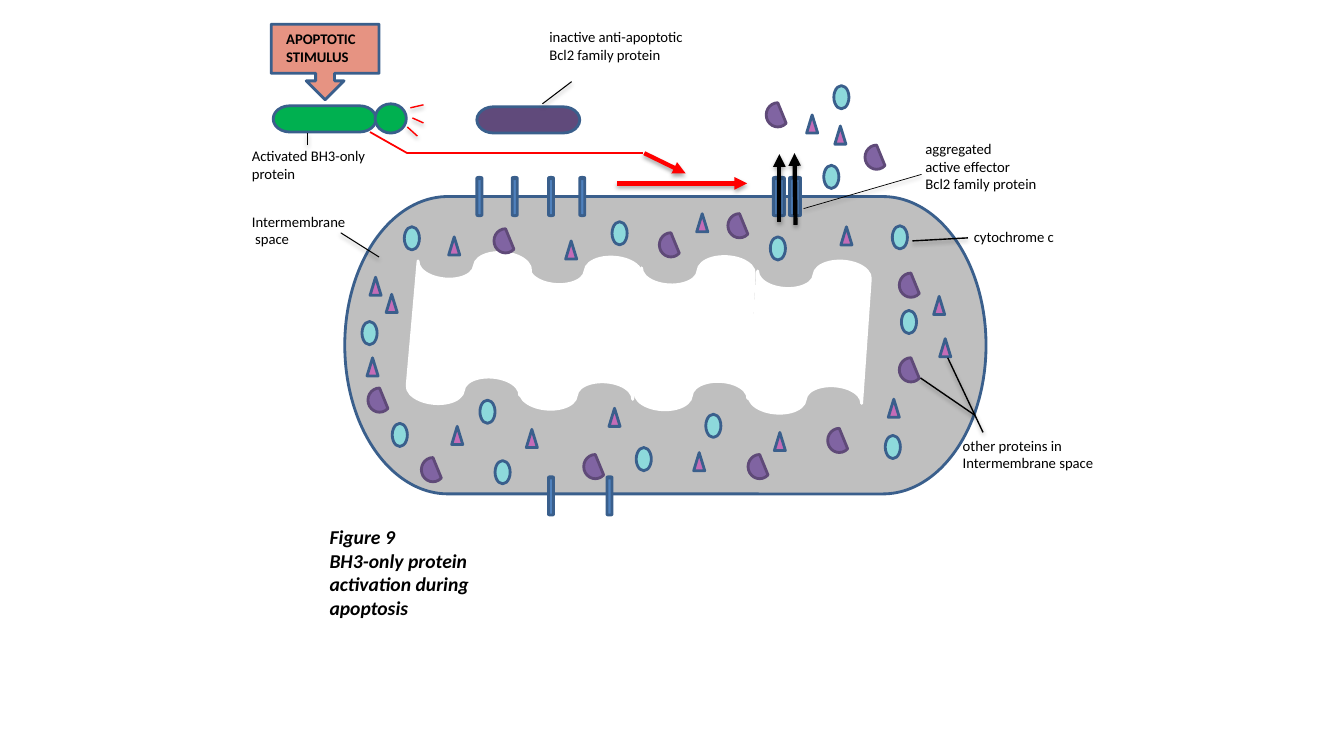
from lxml import etree
from pptx import Presentation, util as u
from pptx.dml.color import RGBColor
from pptx.enum import shapes, text
from pptx.oxml.ns import qn

# The slide is a grid of 1333 columns by 750 rows, each 0.01 inch.
CELL = u.Inches(0.01)
COLS, ROWS = 1333, 750
FORM = shapes.MSO_SHAPE
HEX = {
    "black": "000000", "white": "FFFFFF", "red": "FF0000", "green": "00B050",
    "salmon": "E69382", "grey": "BFBFBF", "edge": "3A5F8C", "blue": "4F81BD",
    "pink": "C46CB7", "aqua": "8DD9DB", "purple": "8064A2", "plum": "5F4A78",
    "dark": "604A7B",
}
# kind: preset, width, height, fill, line
PARTS = {
    "pore": (FORM.CAN, 5, 38, "blue", "edge"),
    "triangle": (FORM.ISOSCELES_TRIANGLE, 11, 18, "pink", "edge"),
    "oval": (FORM.FLOWCHART_CONNECTOR, 15, 23, "aqua", "edge"),
    "chord": (FORM.CHORD, 23, 24, "purple", "plum"),
}


def color(name):
    return RGBColor.from_string(HEX[name])


def place(box, x, y):
    return round((box[0] + x) * CELL), round((box[1] + y) * CELL)


def draw(slide, box, form, area, fill, line="edge", turn=0):
    x, y, w, h = area
    item = slide.shapes.add_shape(form, *place(box, x, y), w * CELL, h * CELL)
    item.rotation = turn
    item.shadow.inherit = False
    item.fill.solid()
    item.fill.fore_color.rgb = color(fill)
    item.line.color.rgb = color(line)
    item.line.width = u.Pt(2)


def scatter(slide, box, kind, spots):
    """Put one part of the given kind at every spot."""
    form, w, h, fill, line = PARTS[kind]
    for x, y in spots:
        draw(slide, box, form, (x, y, w, h), fill, line)


def stroke(slide, box, start, end, width, hue="black", arrow=False, shade=True):
    item = slide.shapes.add_connector(
        shapes.MSO_CONNECTOR.STRAIGHT, *place(box, *start), *place(box, *end))
    item.line.color.rgb = color(hue)
    item.line.width = u.Pt(width)
    if arrow:
        etree.SubElement(item.line._get_or_add_ln(), qn("a:tailEnd"), type="triangle")
    effect = etree.SubElement(item._element.spPr, qn("a:effectLst"))
    if shade:
        blur = etree.SubElement(
            effect, qn("a:outerShdw"), blurRad=str(u.Pt(3.1)),
            dist=str(u.Pt(1.8)), dir="5400000", rotWithShape="0")
        tint = etree.SubElement(blur, qn("a:srgbClr"), val=HEX["black"])
        etree.SubElement(tint, qn("a:alpha"), val="35000")


def write(slide, box, area, words, size=10.5, bold=False, italic=False):
    x, y, w, h = area
    frame = slide.shapes.add_textbox(*place(box, x, y), w * CELL, h * CELL).text_frame
    frame.word_wrap = True
    frame.auto_size = text.MSO_AUTO_SIZE.SHAPE_TO_FIT_TEXT
    frame.text = words
    for para in frame.paragraphs:
        font = para.font
        font.name, font.size = "Calibri", u.Pt(size)
        font.bold, font.italic = bold, italic
        font.color.rgb = color("black")


def organelle(slide, box):
    """Mitochondrion with its membranes, pores, proteins and labels."""
    draw(slide, box, FORM.FLOWCHART_TERMINATOR, (2, 25, 636, 295), "grey")
    for x, y, turn in ((69, 78, 5), (180, 83, 184), (293, 83, 183), (407, 87, 4)):
        draw(slide, box, FORM.FLOWCHART_PUNCHED_TAPE, (x, y, 112, 155),
             "white", "white", turn)
    scatter(slide, box, "pore", [(x, 303) for x in (262, 204)]
            + [(x, 6) for x in (235, 204, 168, 133)])
    scatter(slide, box, "triangle", [
        (27, 105), (43, 122), (24, 185), (108, 253), (264, 235),
        (348, 279), (428, 259), (182, 256), (494, 55), (221, 69),
        (105, 65), (351, 42), (541, 226), (592, 166), (586, 124)])
    scatter(slide, box, "oval", [
        (424, 65), (267, 50), (61, 55), (19, 149), (49, 250), (136, 227),
        (151, 287), (291, 274), (360, 241), (538, 262), (554, 138), (545, 54)])
    scatter(slide, box, "chord", [
        (402, 281), (382, 42), (314, 61), (150, 57), (25, 215),
        (78, 284), (239, 281), (481, 255), (552, 185), (552, 101)])
    write(slide, box, (-100, 36, 142, 45), "Intermembrane\n space")
    write(slide, box, (616, 51, 124, 28), "cytochrome c")
    write(slide, box, (605, 258, 159, 45), "other proteins in\nIntermembrane space")
    stroke(slide, box, (-2, 61), (36, 85), 0.75)
    for start, end in (((565, 69), (620, 66)), ((573, 205), (627, 242)),
                       ((600, 185), (635, 259))):
        stroke(slide, box, start, end, 1)


def release(slide, box):
    """Open pore with the proteins that leave through it."""
    scatter(slide, box, "pore", [(x, 96) for x in (29, 23, 13, 7)])
    scatter(slide, box, "chord", [(98, 64), (0, 22)])
    scatter(slide, box, "triangle", [(40, 34), (68, 45)])
    scatter(slide, box, "oval", [(67, 5), (57, 84)])
    write(slide, box, (148, 54, 141, 63),
          "aggregated\nactive effector\nBcl2 family protein")
    stroke(slide, box, (37, 127), (154, 93), 0.5)
    stroke(slide, box, (29, 143), (28, 72), 3, arrow=True)
    stroke(slide, box, (13, 140), (13, 73), 3, arrow=True)


def signal(slide, box):
    """Stimulus, activated and inactive proteins, and the red pathway."""
    draw(slide, box, FORM.DOWN_ARROW_CALLOUT, (29, 4, 107, 75), "salmon")
    write(slide, box, (34, 5, 115, 45), "APOPTOTIC\nSTIMULUS", bold=True)
    draw(slide, box, FORM.FLOWCHART_TERMINATOR, (233, 86, 102, 26), "dark")
    write(slide, box, (295, 3, 159, 45), "inactive anti-apoptotic\nBcl2 family protein")
    stroke(slide, box, (298, 83), (327, 61), 0.75)
    draw(slide, box, FORM.FLOWCHART_TERMINATOR, (31, 85, 102, 26), "green")
    draw(slide, box, FORM.FLOWCHART_CONNECTOR, (132, 83, 31, 29), "green")
    write(slide, box, (0, 121, 152, 45), "Activated BH3-only\nprotein")
    stroke(slide, box, (65, 124), (65, 112), 0.75)
    bend = (164, 132)
    stroke(slide, box, (127, 111), bend, 1.25, "red", shade=False)
    stroke(slide, box, bend, (398, 132), 1.25, "red", shade=False)
    for start, end in (((399, 132), (440, 152)), ((372, 162), (501, 162))):
        stroke(slide, box, start, end, 3, "red", arrow=True)
    for start, end in (((180, 84), (167, 87)), ((180, 102), (169, 97)),
                       ((174, 115), (164, 106))):
        stroke(slide, box, start, end, 1, "red")


def caption(slide, box):
    write(slide, box, (0, 0, 213, 104),
          "Figure 9\nBH3-only protein activation during apoptosis", 14, True, True)


def main():
    deck = Presentation()
    deck.slide_width, deck.slide_height = COLS * CELL, ROWS * CELL
    slide = deck.slides.add_slide(deck.slide_layouts[6])
    organelle(slide, (340, 170))
    release(slide, (760, 80))
    signal(slide, (240, 20))
    caption(slide, (317, 516))
    deck.save("out.pptx")


if __name__ == "__main__":
    main()
